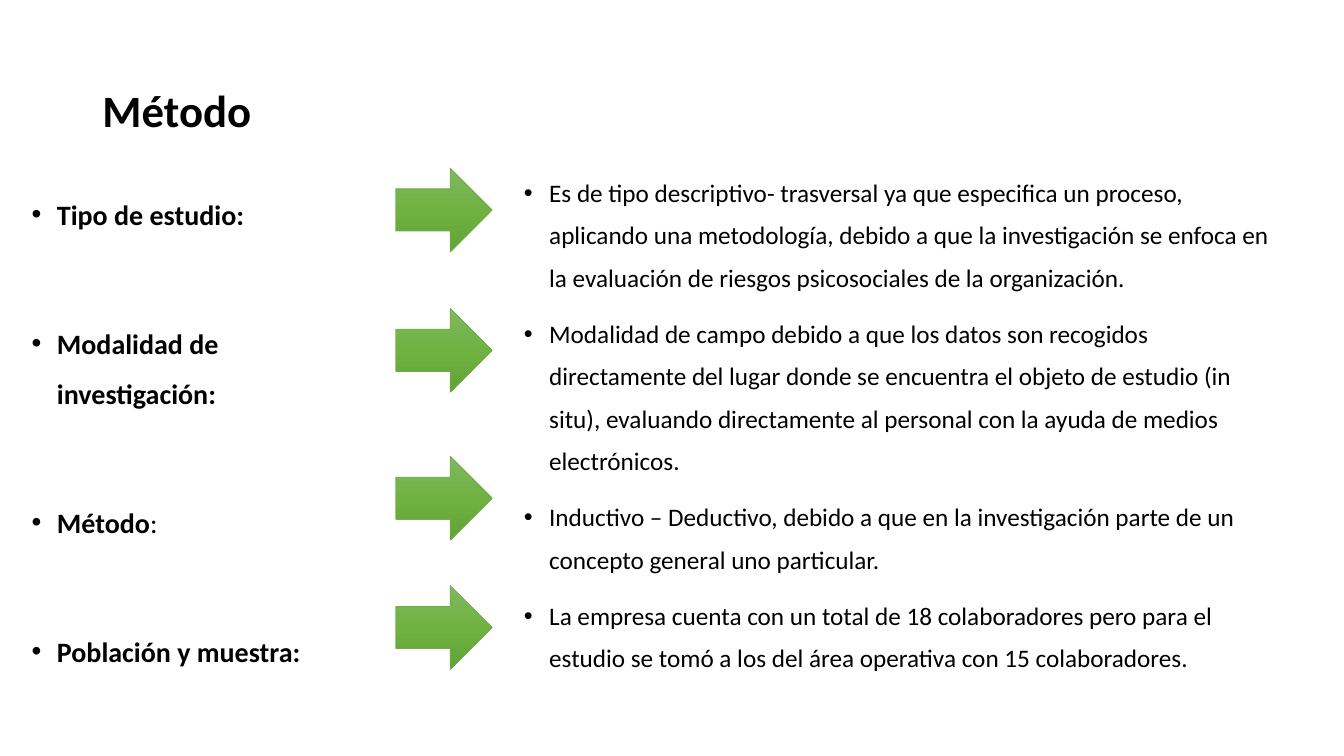
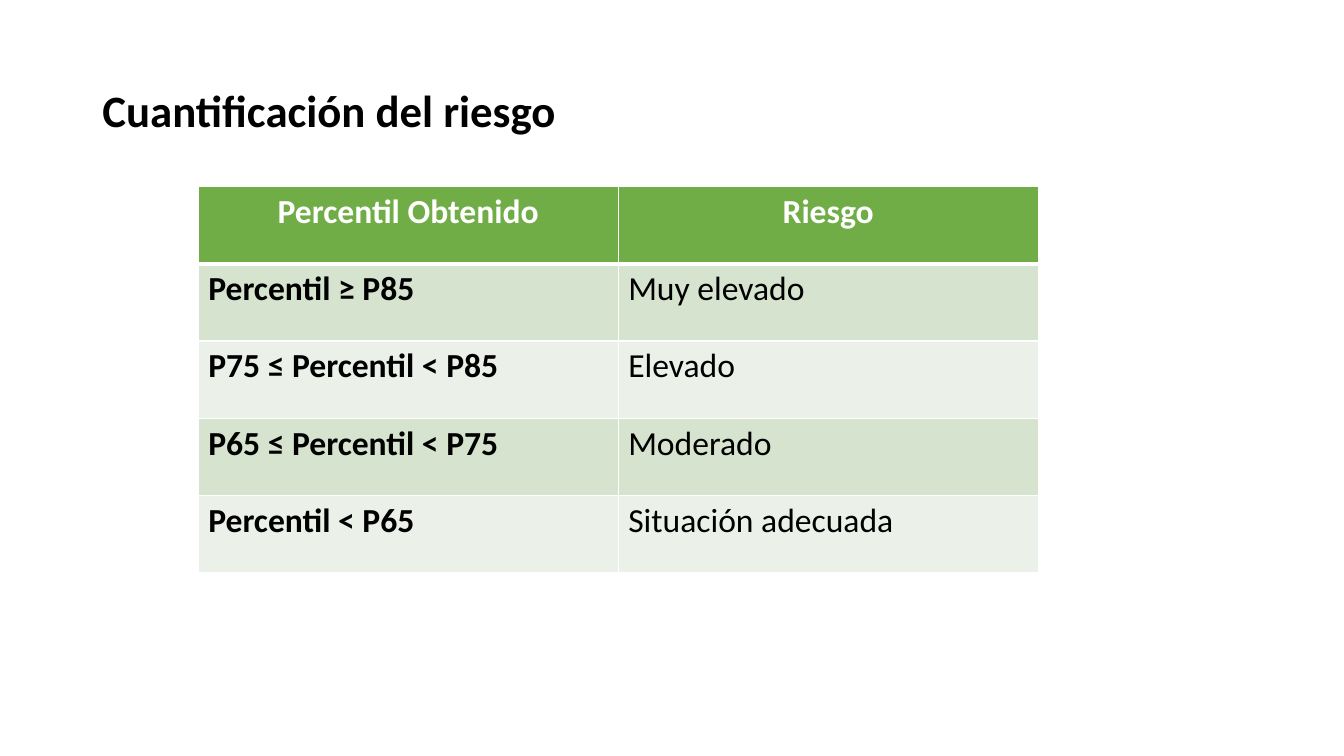
import copy

import pptx
import pptx.dml.color
import pptx.enum.shapes
import pptx.enum.text
import pptx.oxml.ns
import pptx.util
from lxml import etree

PX = 7620  # EMU: 120 px to the inch
FONT = "Calibri"
COLORS = {
    "text": "000000",
    "paper": "FFFFFF",
    "green": "70AD47",
    "band_dark": "D5E3CF",
    "band_light": "EBF1E9",
}
ARROW_GRADIENT = [(0, "81B861"), (0.5, "6FB242"), (1, "62A336")]
ARROW_TOPS = [200, 367, 543, 697]
BULLET_INDENT = 30

STUDY_LABELS = [
    [("Tipo de estudio:", True)],
    [("Modalidad de investigación:", True)],
    [("Método", True), (":", False)],
    [("Población y muestra:", True)],
]
STUDY_DETAILS = [
    "Es de tipo descriptivo- trasversal ya que especifica un proceso, aplicando una "
    "metodología, debido a que la investigación se enfoca en la evaluación de riesgos "
    "psicosociales de la organización.",
    "Modalidad de campo debido a que los datos son recogidos directamente del lugar donde "
    "se encuentra el objeto de estudio (in situ), evaluando directamente al personal con "
    "la ayuda de medios electrónicos.",
    "Inductivo – Deductivo, debido a que en la investigación parte de un concepto general "
    "uno particular.",
    "La empresa cuenta con un total de 18 colaboradores pero para el estudio se tomó a los "
    "del área operativa con 15 colaboradores.",
]
RISK_LEVELS = [
    ("Percentil Obtenido", "Riesgo"),
    ("Percentil ≥ P85", "Muy elevado"),
    ("P75 ≤ Percentil ˂ P85", "Elevado"),
    ("P65 ≤ Percentil ˂ P75", "Moderado"),
    ("Percentil ˂ P65", "Situación adecuada"),
]


def px(*lengths):
    return [pptx.util.Emu(length * PX) for length in lengths]


def rgb(value):
    return pptx.dml.color.RGBColor.from_string(value)


def add_run(paragraph, text, size, bold=False, color="text"):
    run = paragraph.add_run()
    run.text = text
    run.font.name = FONT
    run.font.size = pptx.util.Pt(size)
    run.font.bold = bold
    run.font.color.rgb = rgb(COLORS[color])


def add_titled_slide(prs, text):
    slide = prs.slides.add_slide(prs.slide_layouts[5])
    title = slide.shapes.title
    title.left, title.top, title.width, title.height = px(110, 48, 1380, 174)
    frame = title.text_frame
    frame.auto_size = pptx.enum.text.MSO_AUTO_SIZE.NONE
    frame.vertical_anchor = pptx.enum.text.MSO_ANCHOR.MIDDLE
    heading = frame.paragraphs[0]
    heading.alignment = pptx.enum.text.PP_ALIGN.LEFT
    heading.line_spacing = 0.9
    add_run(heading, text, 32, bold=True)
    return slide


def add_bullets(slide, box, items, size, line_spacing, gap):
    """Add a bulleted list; each item is a list of (text, bold) runs."""
    frame = slide.shapes.add_textbox(*px(*box)).text_frame
    frame.word_wrap = True
    for index, runs in enumerate(items):
        paragraph = frame.add_paragraph() if index else frame.paragraphs[0]
        properties = paragraph._p.get_or_add_pPr()
        properties.set("marL", str(BULLET_INDENT * PX))
        properties.set("indent", str(-BULLET_INDENT * PX))
        bullet_font = etree.SubElement(properties, pptx.oxml.ns.qn("a:buFont"))
        bullet_font.set("typeface", "Arial")
        bullet = etree.SubElement(properties, pptx.oxml.ns.qn("a:buChar"))
        bullet.set("char", "•")
        paragraph.line_spacing = line_spacing
        paragraph.space_before = pptx.util.Pt(gap if index else 0)
        for text, bold in runs:
            add_run(paragraph, text, size, bold)


def add_arrow(slide, top):
    arrow = slide.shapes.add_shape(
        pptx.enum.shapes.MSO_SHAPE.RIGHT_ARROW, *px(471, top, 115, 100))
    arrow.shadow.inherit = False
    arrow.line.color.rgb = rgb(COLORS["green"])
    arrow.line.width = pptx.util.Pt(0.5)
    arrow.fill.gradient()
    arrow.fill.gradient_angle = 270
    stops = arrow.element.spPr.find(".//" + pptx.oxml.ns.qn("a:gsLst"))
    stops.insert(1, copy.deepcopy(stops[0]))
    for stop, (position, color) in zip(arrow.fill.gradient_stops, ARROW_GRADIENT):
        stop.position = position
        stop.color.rgb = rgb(color)


def set_borders(cell, widths):
    """Draw white cell borders; widths maps L, R, T, B, in that order, to points."""
    properties = cell._tc.get_or_add_tcPr()
    for index, (side, width) in enumerate(widths.items()):
        line = etree.Element(pptx.oxml.ns.qn("a:ln" + side), w=str(pptx.util.Pt(width)))
        fill = etree.SubElement(line, pptx.oxml.ns.qn("a:solidFill"))
        etree.SubElement(fill, pptx.oxml.ns.qn("a:srgbClr"), val=COLORS["paper"])
        properties.insert(index, line)


def add_risk_table(slide, rows):
    column_width, row_height = 500, 92
    columns = len(rows[0])
    table = slide.shapes.add_table(
        len(rows), columns,
        *px(236, 222, column_width * columns, row_height * len(rows))).table
    align = pptx.enum.text.PP_ALIGN
    for row, texts in enumerate(rows):
        header = row == 0
        band = "green" if header else "band_dark" if row % 2 else "band_light"
        for column, text in enumerate(texts):
            cell = table.cell(row, column)
            cell.fill.solid()
            cell.fill.fore_color.rgb = rgb(COLORS[band])
            set_borders(cell, {"L": 1, "R": 1, "T": 3 if row == 1 else 1,
                               "B": 3 if header else 1})
            paragraph = cell.text_frame.paragraphs[0]
            paragraph.alignment = align.CENTER if header else align.JUSTIFY
            add_run(paragraph, text, 24, bold=header or column == 0,
                    color="paper" if header else "text")


def main():
    prs = pptx.Presentation()
    prs.slide_width, prs.slide_height = px(1600, 900)

    method = add_titled_slide(prs, "Método")
    details = [[(text, False)] for text in STUDY_DETAILS]
    add_bullets(method, (612, 191, 930, 620), details, 18, 1.4, 10)
    add_bullets(method, (26, 209, 394, 596), STUDY_LABELS, 20, 1.5, 56)
    for top in ARROW_TOPS:
        add_arrow(method, top)

    risk = add_titled_slide(prs, "Cuantificación del riesgo")
    add_risk_table(risk, RISK_LEVELS)

    prs.save("out.pptx")


if __name__ == "__main__":
    main()
